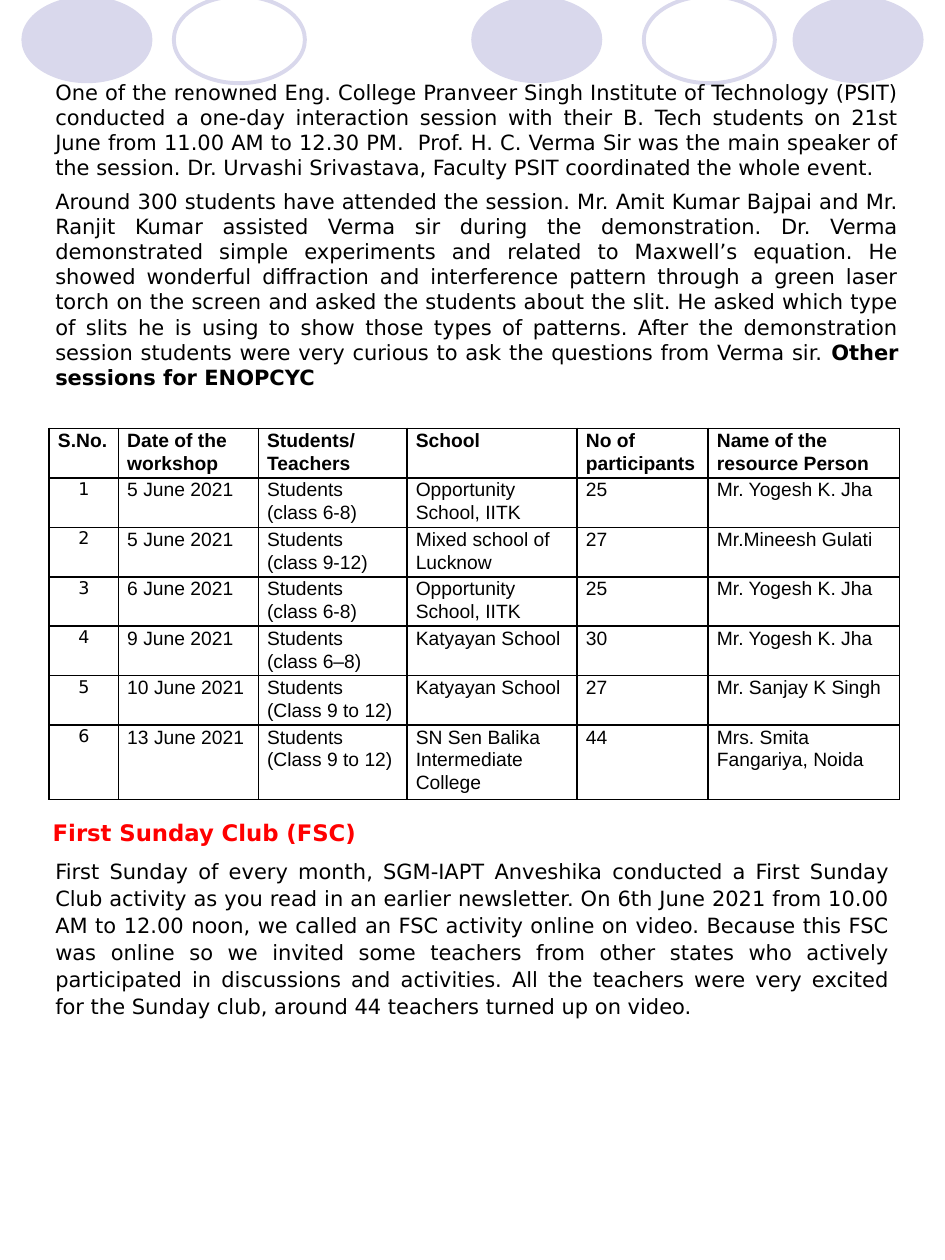
from lxml.etree import SubElement
from pptx import Presentation
from pptx.dml.color import RGBColor
from pptx.enum.shapes import MSO_SHAPE as Preset
from pptx.enum.text import MSO_AUTO_SIZE as AutoSize, PP_ALIGN as Align
from pptx.oxml.ns import qn
from pptx.util import Inches, Pt

SESSION = (
    "One of the renowned Eng. College Pranveer Singh Institute of Technology (PSIT) "
    "conducted a one-day interaction session with their B. Tech students on 21st June "
    "from 11.00 AM to 12.30 PM.  Prof. H. C. Verma Sir was the main speaker of the "
    "session. Dr. Urvashi Srivastava, Faculty PSIT coordinated the whole event."
)
DEMONSTRATION = (
    "Around 300 students have attended the session. Mr. Amit Kumar Bajpai and Mr. Ranjit "
    "Kumar assisted Verma sir during the demonstration. Dr. Verma demonstrated simple "
    "experiments and related to Maxwell’s equation. He showed wonderful diffraction and "
    "interference pattern through a green laser torch on the screen and asked the students "
    "about the slit. He asked which type of slits he is using to show those types of "
    "patterns. After the demonstration session students were very curious to ask the "
    "questions from Verma sir. "
)
SUNDAY_CLUB = (
    "First Sunday of every month, SGM-IAPT Anveshika conducted a First Sunday Club activity "
    "as you read in an earlier newsletter. On 6th June 2021 from 10.00 AM to 12.00 noon, we "
    "called an FSC activity online on video. Because this FSC was online so we invited some "
    "teachers from other states who actively participated in discussions and activities. "
    "All the teachers were very excited for the Sunday club, around 44 teachers turned up "
    "on video."
)
WORKSHOPS = [
    ("S.No.", "Date of the workshop", "Students/\nTeachers", "School",
     "No of participants", "Name of the resource Person"),
    ("1", "5 June 2021", "Students (class 6-8)", "Opportunity School, IITK", "25",
     "Mr. Yogesh K. Jha"),
    ("2", "5 June 2021", "Students (class 9-12)", "Mixed school of Lucknow", "27",
     "Mr.Mineesh Gulati"),
    ("3", "6 June 2021", "Students (class 6-8)", "Opportunity School, IITK", "25",
     "Mr. Yogesh K. Jha"),
    ("4", "9 June 2021", "Students (class 6–8)", "Katyayan School", "30",
     "Mr. Yogesh K. Jha"),
    ("5", "10 June 2021", "Students (Class 9 to 12)", "Katyayan School", "27",
     "Mr. Sanjay K Singh"),
    ("6", "13 June 2021", "Students (Class 9 to 12)",
     "SN Sen Balika Intermediate College", "44", "Mrs. Smita Fangariya, Noida"),
]


def color(value):
    return RGBColor.from_string(value)


class Newsletter:
    """Holds the newsletter style and draws elements on the current slide."""

    body_font, table_font = "DejaVu Sans", "Arial"
    black, white, red, lavender = "000000", "FFFFFF", "FF0000", "D9D8EC"
    spacing = 1.07

    def __init__(self, slide):
        self.slide = slide

    def set_font(self, paragraph, name, size, value=black, bold=False):
        font = paragraph.font
        font.name, font.size, font.bold = name, Pt(size), bold
        font.color.rgb = color(value)

    def ellipse(self, left, filled):
        shape = self.slide.shapes.add_shape(
            Preset.OVAL, Inches(left), Inches(-0.03), Inches(1.04), Inches(0.69))
        shape.shadow.inherit = False
        if filled:
            shape.fill.solid()
            shape.fill.fore_color.rgb = color(self.lavender)
            shape.line.fill.background()
        else:
            shape.fill.background()
            shape.line.color.rgb = color(self.lavender)
            shape.line.width = Pt(2.25)

    def text(self, left, top, width, height, paragraphs, wrap=True):
        box = self.slide.shapes.add_textbox(
            Inches(left), Inches(top), Inches(width), Inches(height))
        frame = box.text_frame
        frame.word_wrap = wrap
        frame.auto_size = AutoSize.SHAPE_TO_FIT_TEXT
        for index, content in enumerate(paragraphs):
            paragraph = frame.add_paragraph() if index else frame.paragraphs[0]
            paragraph.text = content
            paragraph.alignment = Align.JUSTIFY if wrap else Align.LEFT
            self.set_font(paragraph, self.body_font, 12)
        return frame.paragraphs

    def border(self, cell):
        properties = cell._tc.get_or_add_tcPr()
        for index, side in enumerate(("a:lnL", "a:lnR", "a:lnT", "a:lnB")):
            line = properties.makeelement(qn(side), {"w": str(Pt(1))})
            fill = SubElement(line, qn("a:solidFill"))
            SubElement(fill, qn("a:srgbClr"), val=self.black)
            properties.insert(index, line)

    def cell(self, cell, content, header, numbered):
        cell.fill.solid()
        cell.fill.fore_color.rgb = color(self.white)
        cell.margin_left = cell.margin_right = Inches(0.07)
        cell.margin_top = cell.margin_bottom = 0
        cell.text = content
        for paragraph in cell.text_frame.paragraphs:
            paragraph.line_spacing = self.spacing
            if numbered:
                paragraph.alignment = Align.CENTER
                self.set_font(paragraph, self.body_font, 10)
            else:
                self.set_font(paragraph, self.table_font, 11, bold=header)
        self.border(cell)

    def table(self, left, top, widths, heights, rows):
        table = self.slide.shapes.add_table(
            len(rows), len(widths), Inches(left), Inches(top),
            Inches(sum(widths)), Inches(sum(heights))).table
        for column, width in zip(table.columns, widths):
            column.width = Inches(width)
        for row_index, (height, values) in enumerate(zip(heights, rows)):
            table.rows[row_index].height = Inches(height)
            for column_index, value in enumerate(values):
                self.cell(table.cell(row_index, column_index), value,
                          row_index == 0, row_index > 0 and column_index == 0)


def main():
    presentation = Presentation()
    presentation.slide_width, presentation.slide_height = Inches(7.5), Inches(10)
    page = Newsletter(presentation.slides.add_slide(presentation.slide_layouts[6]))

    for left, filled in ((3.74, True), (6.29, True), (0.17, True), (5.11, False), (1.38, False)):
        page.ellipse(left, filled)

    session, demonstration = page.text(0.34, 0.58, 6.89, 2.79, [SESSION, DEMONSTRATION])
    session.space_after = Pt(4.6)
    closing = demonstration.add_run()
    closing.text = "Other sessions for ENOPCYC"
    closing.font.bold = True

    page.table(0.39, 3.4, [0.55, 1.11, 1.18, 1.35, 1.04, 1.52],
               [0.38] * 6 + [0.57], WORKSHOPS)

    heading, = page.text(0.32, 6.43, 2.71, 0.31, ["First Sunday Club (FSC)"], wrap=False)
    page.set_font(heading, page.body_font, 13, page.red, bold=True)
    club, = page.text(0.34, 6.75, 6.82, 1.38, [SUNDAY_CLUB])
    for paragraph in (heading, club):
        paragraph.line_spacing = page.spacing
        paragraph.space_after = Pt(8)

    presentation.save("out.pptx")


if __name__ == "__main__":
    main()
